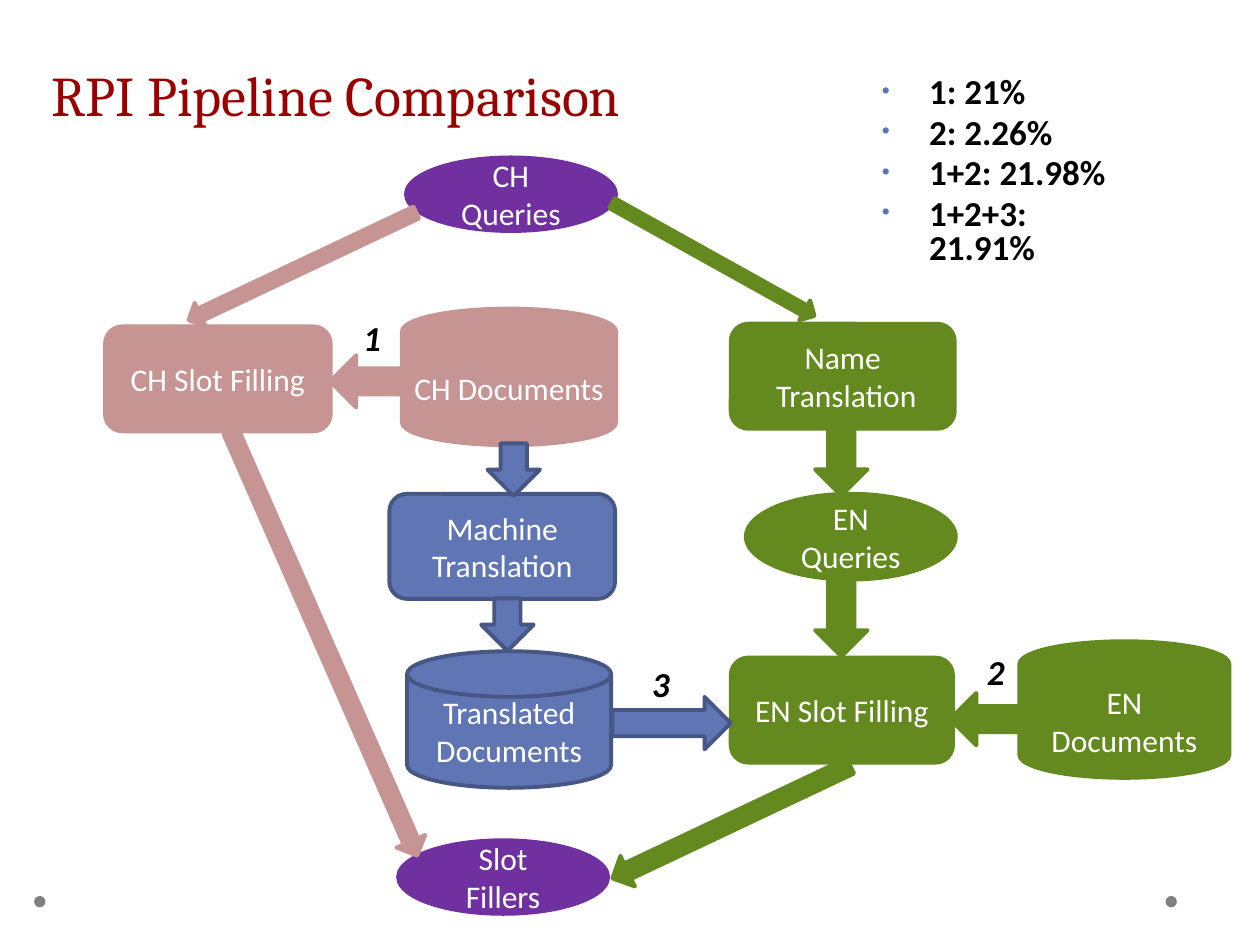
"""Build the pipeline comparison slide."""
from lxml.etree import SubElement
from pptx import Presentation
from pptx.dml.color import RGBColor
from pptx.enum.shapes import MSO_SHAPE
from pptx.enum.text import MSO_ANCHOR, MSO_AUTO_SIZE, PP_ALIGN
from pptx.oxml.ns import qn
from pptx.util import Pt

HUES = {
    "title": "990000", "purple": "7030A0", "pink": "C79494",
    "blue": "6076B4", "navy": "475785", "green": "63891F",
    "gray": "808080", "white": "FFFFFF", "black": "000000",
}
EDGES = {"blue": "navy"}
OVAL = MSO_SHAPE.OVAL
CARD = MSO_SHAPE.ROUNDED_RECTANGLE
DISK = MSO_SHAPE.FLOWCHART_MAGNETIC_DISK
LEFT = MSO_SHAPE.LEFT_ARROW
DOWN = MSO_SHAPE.DOWN_ARROW

PARTS = [
    (OVAL, "purple", (172, 0, 120, 42), 0, ["CH Queries"]),
    (CARD, "pink", (0, 96.5, 129, 60), 0, ["CH Slot Filling"]),
    (DISK, "pink", (169.7, 86.4, 122.4, 78), 0, ["CH Documents"]),
    (LEFT, "pink", (128.6, 113, 39.6, 30), 0, []),
    (CARD, "blue", (162.5, 192.2, 129, 60), 0, ["Machine Translation"]),
    (DOWN, "blue", (218.6, 163.4, 30, 30), 0, []),
    (DOWN, "blue", (215, 252, 30, 30), 0, []),
    (DISK, "blue", (172.6, 282.2, 116.6, 78), 0, ["Translated Documents"]),
    (CARD, "green", (357.6, 95, 128, 60), 0, ["Name", " Translation"]),
    (DOWN, "green", (405.8, 151.2, 30, 42), 0, []),
    (OVAL, "green", (366.2, 192.2, 120, 49), 0, ["EN Queries"]),
    (CARD, "green", (357.6, 285.8, 127, 60), 0, ["EN Slot Filling"]),
    (DOWN, "green", (405.8, 241.2, 30, 44), 0, []),
    (DISK, "green", (522.5, 276.5, 120, 78), 0, ["EN Documents"]),
    (OVAL, "purple", (167.5, 390.2, 120, 42), 0, ["Slot Fillers"]),
    (LEFT, "pink", (40.8, 54.7, 144, 15), 334.7, []),
    (LEFT, "green", (281.3, 51.8, 132.5, 13), 209.1, []),
    (LEFT, "blue", (289.9, 308.2, 67.7, 30), 180, []),
    (LEFT, "green", (482.9, 306, 39.6, 30), 0, []),
    (LEFT, "pink", (-7.4, 268.6, 265, 18), 246.3, []),
    (LEFT, "green", (282.7, 370.1, 150.5, 19.4), 334.7, []),
]
MARKS = [("1", 74.6, 92.9), ("2", 431, 283.7), ("3", 239.5, 290.9)]
SCORES = ["1: 21%", "2: 2.26%", "1+2: 21.98%", "1+2+3: 21.91%"]


def color(name):
    """Return the named colour."""
    return RGBColor.from_string(HUES[name])


def place(left, top, box):
    """Return a box in points, moved by a corner."""
    x, y, wide, high = box
    return Pt(left + x), Pt(top + y), Pt(wide), Pt(high)


def add_run(para, text, size, hue, face="Calibri", bold=None, slant=None):
    """Add one styled run to a paragraph."""
    run = para.add_run()
    run.text = text
    font = run.font
    font.name, font.size, font.bold, font.italic = face, Pt(size), bold, slant
    font.color.rgb = color(hue)


def add_paras(frame, lines):
    """Yield a paragraph with each line of text."""
    for i, line in enumerate(lines):
        yield (frame.add_paragraph() if i else frame.paragraphs[0]), line


def add_part(slide, kind, hue, area, turn=0, lines=()):
    """Add one filled shape with centred text."""
    shape = slide.shapes.add_shape(kind, *area)
    shape.shadow.inherit = False
    shape.rotation = turn
    shape.fill.solid()
    shape.fill.fore_color.rgb = color(hue)
    shape.line.color.rgb = color(EDGES.get(hue, hue))
    shape.line.width = Pt(2.25)
    frame = shape.text_frame
    frame.word_wrap = True
    frame.vertical_anchor = MSO_ANCHOR.MIDDLE
    for para, line in add_paras(frame, lines):
        para.alignment = PP_ALIGN.CENTER
        add_run(para, line, 18, "white")
    return shape


def add_note(slide, area):
    """Add an unwrapped text box and return its frame."""
    frame = slide.shapes.add_textbox(*area).text_frame
    frame.word_wrap = False
    frame.vertical_anchor = MSO_ANCHOR.MIDDLE
    return frame


def set_gaps(para):
    """Set the tight line spacing of the bold notes."""
    para.line_spacing = 0.8
    para.space_before = Pt(4)


def add_bullet(para):
    """Give a paragraph a small blue bullet."""
    props = para._p.get_or_add_pPr()
    props.set("marL", str(Pt(27)))
    props.set("indent", str(-Pt(27)))
    tint = SubElement(props, qn("a:buClr"))
    SubElement(tint, qn("a:srgbClr")).set("val", HUES["blue"])
    SubElement(props, qn("a:buSzPct")).set("val", "65000")
    SubElement(props, qn("a:buFont")).set("typeface", "Arial")
    SubElement(props, qn("a:buChar")).set("char", "•")


def set_title(slide, left, top, wide, high):
    """Move and fill the title placeholder."""
    title = slide.shapes.title
    title.left, title.top, title.width, title.height = place(
        left, top, (0, 0, wide, high))
    frame = title.text_frame
    frame.auto_size = MSO_AUTO_SIZE.NONE
    frame.vertical_anchor = MSO_ANCHOR.MIDDLE
    frame.margin_left, frame.margin_right = Pt(7.2), Pt(3)
    para = frame.paragraphs[0]
    para.alignment = PP_ALIGN.LEFT
    para.line_spacing = Pt(58)
    add_run(para, "RPI Pipeline Comparison", 32, "title", "Cambria")


def add_dots(slide, left, top, wide, size):
    """Add a gray dot at each end of the foot."""
    for x in (0, wide - size):
        dot = add_part(slide, OVAL, "gray", place(left, top, (x, 0, size, size)))
        dot.line.fill.background()


def add_flow(slide, left, top):
    """Add the pipeline shapes, arrows and step numbers."""
    for kind, hue, box, turn, lines in PARTS:
        add_part(slide, kind, hue, place(left, top, box), turn, lines)
    for text, x, y in MARKS:
        frame = add_note(slide, place(left, top, (x, y, 156, 24)))
        para = frame.paragraphs[0]
        para.alignment = PP_ALIGN.CENTER
        set_gaps(para)
        add_run(para, text, 20, "black", bold=True, slant=True)


def add_scores(slide, left, top, wide, high):
    """Add the bulleted scores."""
    frame = add_note(slide, place(left, top, (0, 0, wide, high)))
    for para, line in add_paras(frame, SCORES):
        set_gaps(para)
        add_bullet(para)
        add_run(para, line, 20, "black", bold=True)


def main():
    """Build and save the deck."""
    deck = Presentation()
    deck.slide_width, deck.slide_height = Pt(720), Pt(540)
    slide = deck.slides.add_slide(deck.slide_layouts[5])
    add_dots(slide, 19.5, 512, 653, 6.5)
    set_title(slide, 22.3, 4.3, 579.6, 79.2)
    add_flow(slide, 60, 90)
    add_scores(slide, 496.8, 86.4, 156, 24)
    deck.save("out.pptx")


if __name__ == "__main__":
    main()
